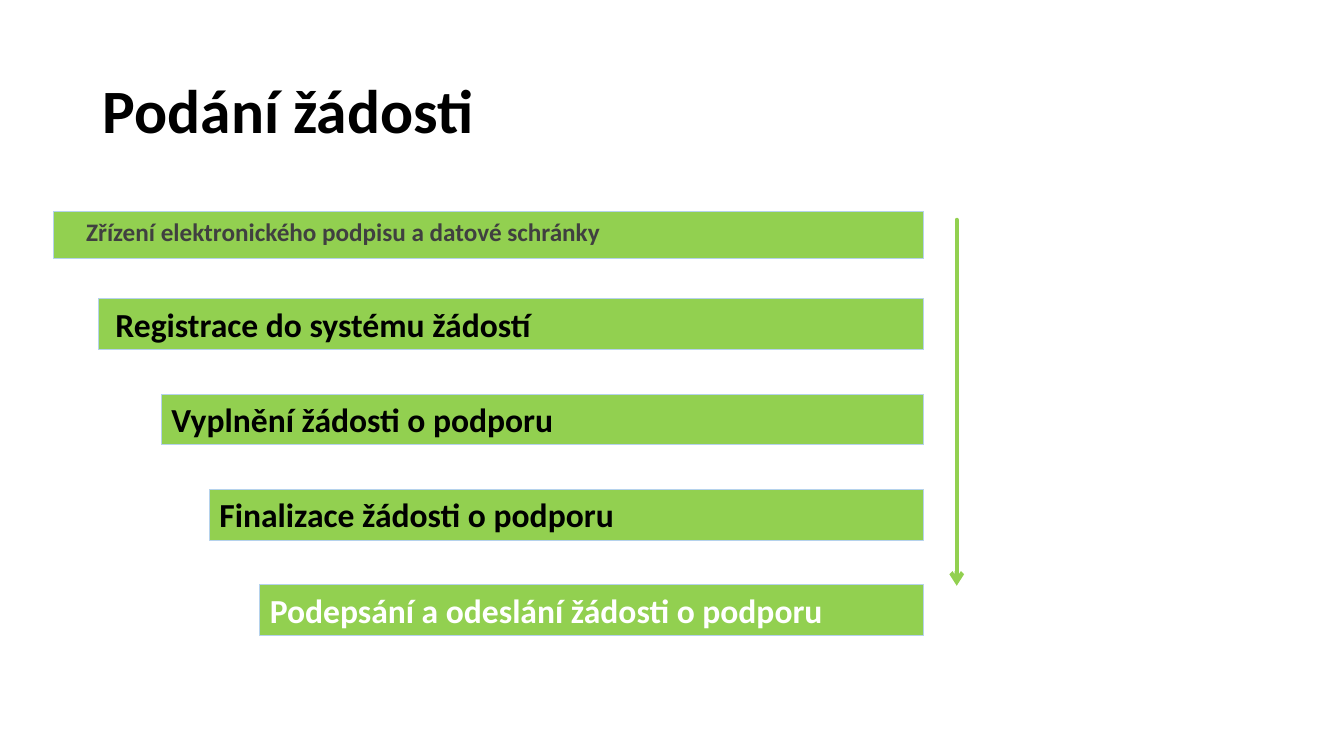
from lxml import etree
from pptx import Presentation
from pptx.dml.color import RGBColor
from pptx.enum import shapes, text
from pptx.oxml.ns import qn
from pptx.util import Cm, Pt

GREEN = RGBColor(0x92, 0xD0, 0x50)
PALE_BLUE = RGBColor(0xB5, 0xD2, 0xEC)
BLACK = RGBColor(0, 0, 0)
GREY = RGBColor(0x40, 0x40, 0x40)
WHITE = RGBColor(0xFF, 0xFF, 0xFF)


def format_paragraph(p, size, color):
    p.alignment = text.PP_ALIGN.LEFT
    p.font.name = "Calibri"
    p.font.size = Pt(size)
    p.font.bold = True
    p.font.color.rgb = color


prs = Presentation()
prs.slide_width, prs.slide_height = Cm(33.87), Cm(19.05)
s = prs.slides.add_slide(prs.slide_layouts[5])

title = s.shapes.title
title.left, title.top, title.width, title.height = Cm(2.34), Cm(1.02), Cm(29.21), Cm(3.68)
tf = title.text_frame
tf.text = "Podání žádosti"
tf.vertical_anchor = text.MSO_ANCHOR.MIDDLE
format_paragraph(tf.paragraphs[0], 44, BLACK)
tf.paragraphs[0].line_spacing = 0.9

# Steps share a right edge: label, left, height, text inset, font size, colour
BARS_RIGHT, FIRST_TOP, SECOND_TOP, STEP = 23.28, 5.33, 7.53, 2.4
steps = [
    ("Zřízení elektronického podpisu a datové schránky", 1.35, 1.19, 0.82, 18, GREY),
    ("Registrace do systému žádostí", 2.48, 1.28, 0.43, 24, BLACK),
    ("Vyplnění žádosti o podporu", 4.07, 1.28, 0.25, 24, BLACK),
    ("Finalizace žádosti o podporu", 5.28, 1.28, 0.25, 24, BLACK),
    ("Podepsání a odeslání žádosti o podporu", 6.55, 1.28, 0.25, 24, WHITE),
]
for i, (label, left, height, inset, size, color) in enumerate(steps):
    top = FIRST_TOP if i == 0 else SECOND_TOP + (i - 1) * STEP
    sp = s.shapes.add_shape(shapes.MSO_SHAPE.RECTANGLE, Cm(left), Cm(top),
                            Cm(BARS_RIGHT - left), Cm(height))
    sp.shadow.inherit = False
    sp.fill.solid()
    sp.fill.fore_color.rgb = GREEN
    sp.line.color.rgb = PALE_BLUE
    sp.line.width = Pt(0.75)
    tf = sp.text_frame
    tf.word_wrap = True
    tf.vertical_anchor = text.MSO_ANCHOR.TOP
    tf.margin_left = Cm(inset)
    tf.text = label
    format_paragraph(tf.paragraphs[0], size, color)

arrow = s.shapes.add_connector(shapes.MSO_CONNECTOR.STRAIGHT,
                               Cm(24.11), Cm(5.54), Cm(24.11), Cm(14.76))
arrow.line.color.rgb = GREEN
arrow.line.width = Pt(3)
ln = arrow.line._get_or_add_ln()
ln.set("cap", "rnd")
etree.SubElement(ln, qn("a:round"))
etree.SubElement(ln, qn("a:tailEnd"), type="arrow")
etree.SubElement(arrow._element.spPr, qn("a:effectLst"))

prs.save("out.pptx")
